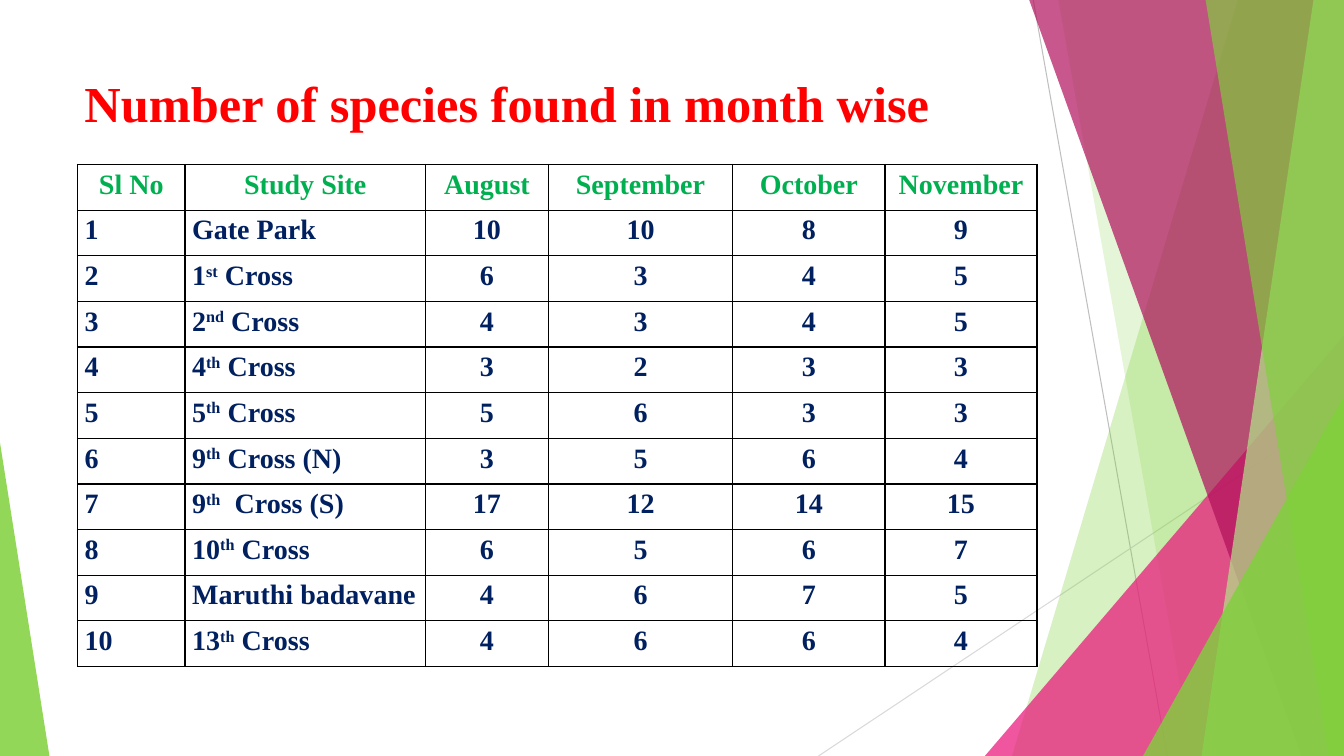
from lxml import etree
from pptx import Presentation, util as u
from pptx.dml.color import RGBColor
from pptx.enum import shapes, text
from pptx.oxml import ns

RED = RGBColor(0xFF, 0x00, 0x00)
GREEN = RGBColor(0x00, 0xB0, 0x50)
NAVY = RGBColor(0x00, 0x20, 0x60)
BLACK = RGBColor(0x00, 0x00, 0x00)
LIME = RGBColor(0x7F, 0xD1, 0x3B)
PALE_LIME = RGBColor(0xB2, 0xE3, 0x89)
PINK = RGBColor(0xEA, 0x15, 0x7A)
PLUM = RGBColor(0xB0, 0x10, 0x5C)
GREY = RGBColor(0xBF, 0xBF, 0xBF)
LIGHT_GREY = RGBColor(0xD9, 0xD9, 0xD9)

HEADER = ["Sl No", "Study Site", "August", "September", "October", "November"]
SITES = [
    ("Gate Park", 10, 10, 8, 9),
    ("1^st^ Cross", 6, 3, 4, 5),
    ("2^nd^ Cross", 4, 3, 4, 5),
    ("4^th^ Cross", 3, 2, 3, 3),
    ("5^th^ Cross", 5, 6, 3, 3),
    ("9^th^ Cross (N)", 3, 5, 6, 4),
    ("9^th^  Cross (S)", 17, 12, 14, 15),
    ("10^th^ Cross", 6, 5, 6, 7),
    ("Maruthi badavane", 4, 6, 7, 5),
    ("13^th^ Cross", 4, 6, 6, 4),
]
COLUMN_SHARES = [8, 17.9, 9.13, 13.73, 11.32, 11.32]
ROW_SHARE = 6.04


def apply(target, values):
    for name, value in values.items():
        setattr(target, name, value)


def add_child(parent, tag, **attributes):
    return etree.SubElement(parent, ns.qn(tag), attributes)


class SpeciesSlide:
    """Draws on one slide, with lengths in percent of its width and height."""

    font = {"name": "Times New Roman", "bold": True}
    cell_format = {"margin_left": u.Inches(0.07), "margin_right": u.Inches(0.07),
                   "margin_top": 0, "margin_bottom": 0,
                   "vertical_anchor": text.MSO_ANCHOR.TOP}

    def __init__(self, presentation):
        self.width = presentation.slide_width
        self.height = presentation.slide_height
        self.slide = presentation.slides.add_slide(presentation.slide_layouts[6])

    def x(self, share):
        return round(self.width * share / 100)

    def y(self, share):
        return round(self.height * share / 100)

    def box(self, left, top, width, height):
        return self.x(left), self.y(top), self.x(width), self.y(height)

    def line(self, start, end, color):
        connector = self.slide.shapes.add_connector(
            shapes.MSO_CONNECTOR.STRAIGHT, self.x(start[0]), self.y(start[1]),
            self.x(end[0]), self.y(end[1]))
        connector.line.color.rgb = color
        connector.line.width = u.Pt(0.75)
        add_child(connector._element.spPr, "a:effectLst")

    def paint(self, shape, color, opacity):
        shape.shadow.inherit = False
        shape.line.fill.background()
        shape.fill.solid()
        shape.fill.fore_color.rgb = color
        swatch = shape._element.spPr.find(".//" + ns.qn("a:srgbClr"))
        add_child(swatch, "a:alpha", val=str(opacity * 1000))

    def shard(self, top_left, bottom_left, color, opacity):
        builder = self.slide.shapes.build_freeform(self.x(top_left), 0)
        corners = [(100, 0), (100, 100), (bottom_left, 100)]
        builder.add_line_segments([(self.x(x), self.y(y)) for x, y in corners])
        self.paint(builder.convert_to_shape(), color, opacity)

    def corner(self, left, top, width, apex, color, opacity):
        triangle = self.slide.shapes.add_shape(
            shapes.MSO_SHAPE.ISOSCELES_TRIANGLE,
            *self.box(left, top, width, 100 - top))
        triangle.adjustments[0] = apex
        self.paint(triangle, color, opacity)

    def add_text(self, paragraph, content, size, color):
        for index, part in enumerate(content.split("^")):
            run = paragraph.add_run()
            run.text = part
            apply(run.font, {**self.font, "size": u.Pt(size)})
            run.font.color.rgb = color
            if index % 2:
                run._r.get_or_add_rPr().set("baseline", "30000")

    def title(self, content, box):
        frame = self.slide.shapes.add_textbox(*self.box(*box)).text_frame
        apply(frame, {"word_wrap": True, "vertical_anchor": text.MSO_ANCHOR.TOP})
        self.add_text(frame.paragraphs[0], content, 36, RED)

    def cell(self, cell, content, color, alignment):
        apply(cell, self.cell_format)
        properties = cell._tc.get_or_add_tcPr()
        for side in "LRTB":
            border = add_child(properties, f"a:ln{side}", w=str(u.Pt(1)))
            add_child(add_child(border, "a:solidFill"), "a:srgbClr", val=str(BLACK))
        cell.fill.background()
        paragraph = cell.text_frame.paragraphs[0]
        apply(paragraph, {"alignment": alignment, "line_spacing": 1.15})
        self.add_text(paragraph, content, 20, color)

    def table(self, left, top, rows):
        frame = self.slide.shapes.add_table(
            len(rows), len(COLUMN_SHARES),
            *self.box(left, top, sum(COLUMN_SHARES), ROW_SHARE * len(rows)))
        table = frame.table
        apply(table, {"first_row": False, "horz_banding": False})
        for column, share in zip(table.columns, COLUMN_SHARES):
            column.width = self.x(share)
        for r, values in enumerate(rows):
            table.rows[r].height = self.y(ROW_SHARE)
            for c, value in enumerate(values):
                centred = r == 0 or c > 1
                self.cell(table.cell(r, c), str(value), NAVY if r else GREEN,
                          text.PP_ALIGN.CENTER if centred else text.PP_ALIGN.LEFT)


def main():
    presentation = Presentation()
    presentation.slide_width = u.Inches(13.33)
    presentation.slide_height = u.Inches(7.5)
    page = SpeciesSlide(presentation)

    page.line((76.88, 0), (86.85, 100), GREY)
    page.line((100, 53.73), (60.9, 100), LIGHT_GREY)
    page.shard(92.1, 75.3, LIME, 30)
    page.shard(78.75, 88.73, LIME, 20)
    page.corner(73.28, 44.4, 26.72, 1, PINK, 72)
    page.shard(76.58, 96.83, PLUM, 70)
    page.shard(97.73, 89.4, PALE_LIME, 70)
    page.shard(89.7, 98.85, LIME, 65)
    page.corner(85.05, 52.4, 14.95, 1, LIME, 80)
    page.corner(0, 58.53, 3.68, 0, LIME, 85)

    page.title("Number of species found in month wise", (5.55, 8.93, 70.5, 19.2))
    page.table(5.77, 21.76, [HEADER] + [(n, *site) for n, site in enumerate(SITES, 1)])
    presentation.save("out.pptx")


if __name__ == "__main__":
    main()
